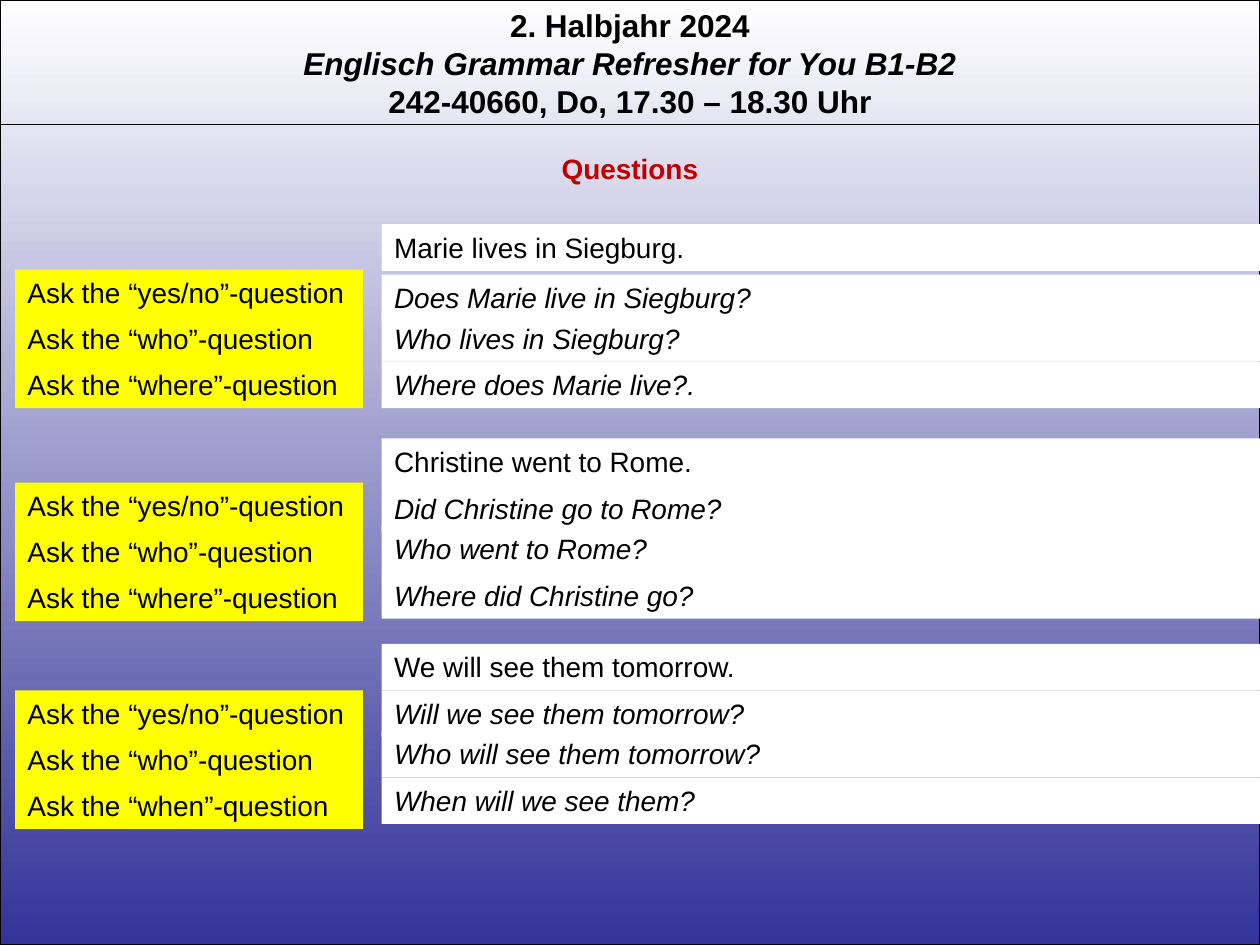
from lxml.etree import SubElement
from pptx import Presentation
from pptx.dml.color import RGBColor
from pptx.enum.shapes import MSO_CONNECTOR as Link, MSO_SHAPE as Kind
from pptx.enum.text import MSO_ANCHOR as Anchor, MSO_AUTO_SIZE as Auto, PP_ALIGN as Align
from pptx.oxml.ns import qn
from pptx.util import Inches, Pt

# The grid has 100 columns and 75 rows of a tenth of an inch each.
COLS, ROWS = 100, 75
BAR = 3.7
ASK = (1.2, 27.6)
REPLY = (30.3, 69.7)
ASK_STEP = 3.65
REPLY_STEPS = (0, 3.2, 6.9)

# Top of the statement, of the first prompt and of the first reply, then the texts.
DRILLS = [
    (17.8, 21.4, 21.8, "Marie lives in Siegburg.",
     [("yes/no", "Does Marie live in Siegburg?"),
      ("who", "Who lives in Siegburg?"),
      ("where", "Where does Marie live?.")]),
    (34.8, 38.3, 38.5, "Christine went to Rome.",
     [("yes/no", "Did Christine go to Rome?"),
      ("who", "Who went to Rome?"),
      ("where", "Where did Christine go?")]),
    (51.1, 54.8, 54.8, "We will see them tomorrow.",
     [("yes/no", "Will we see them tomorrow?"),
      ("who", "Who will see them tomorrow?"),
      ("when", "When will we see them?")]),
]


def cells(*nums):
    return [Inches(num / 10) for num in nums]


def color(code):
    return RGBColor.from_string(code)


def write(shape, lines, size=16, bold=False, slant=(), ink="000000", align=Align.LEFT):
    """Fill the shape with lines; slant holds the numbers of the italic ones."""
    frame = shape.text_frame
    frame.word_wrap = True
    frame.auto_size = Auto.SHAPE_TO_FIT_TEXT
    frame.vertical_anchor = Anchor.TOP
    for num, line in enumerate(lines):
        para = frame.paragraphs[0] if num == 0 else frame.add_paragraph()
        para.alignment = align
        run = para.add_run()
        run.text = line
        font = run.font
        font.name, font.size, font.bold = "Arial", Pt(size), bold
        font.italic = num in slant
        font.color.rgb = color(ink)


def add_bar(slide, box, line, fill, **form):
    bar = slide.shapes.add_shape(Kind.RECTANGLE, *cells(*box))
    bar.shadow.inherit = False
    bar.fill.solid()
    bar.fill.fore_color.rgb = color(fill)
    bar.line.fill.background()
    write(bar, [line], **form)


def add_ground(slide, box):
    ground = slide.shapes.add_shape(Kind.RECTANGLE, *cells(*box))
    ground.shadow.inherit = False
    ground.fill.gradient()
    ground.fill.gradient_angle = 270
    for stop, code in zip(ground.fill.gradient_stops, ("FFFFFF", "333399")):
        stop.color.rgb = color(code)
    ground.line.color.rgb = color("000000")
    ground.line.width = Pt(0.75)
    # Behind the title placeholder
    slide.shapes.element.insert(2, ground.element)


def add_head(slide, box):
    left, top, width, height = box
    head = slide.shapes.add_textbox(*cells(*box))
    write(head, ["2. Halbjahr 2024",
                 "Englisch Grammar Refresher for You B1-B2",
                 "242-40660, Do, 17.30 – 18.30 Uhr"],
          size=18, bold=True, slant=(1,), align=Align.CENTER)
    low = top + height - 0.2
    rule = slide.shapes.add_connector(Link.STRAIGHT, *cells(left, low, left + width, low))
    rule.line.color.rgb = color("000000")
    rule.line.width = Pt(0.75)
    SubElement(rule.element.spPr, qn("a:effectLst"))


def set_title(slide, box):
    title = slide.shapes.title
    title.left, title.top, title.width, title.height = cells(*box)
    write(title, ["Questions"], bold=True, ink="C00000", align=Align.CENTER)


def add_drill(slide, top, ask_top, reply_top, fact, pairs):
    """Place a statement with its prompts at the left and replies at the right."""
    (ask_left, ask_width), (left, width) = ASK, REPLY
    add_bar(slide, (left, top, width, BAR), fact, "FFFFFF")
    for num, (word, reply) in enumerate(pairs):
        add_bar(slide, (ask_left, ask_top + num * ASK_STEP, ask_width, BAR),
                f"Ask the “{word}”-question", "FFFF00")
        add_bar(slide, (left, reply_top + REPLY_STEPS[num], width, BAR),
                reply, "FFFFFF", slant=(0,))


def main():
    deck = Presentation()
    deck.slide_width, deck.slide_height = cells(COLS, ROWS)
    slide = deck.slides.add_slide(deck.slide_layouts[5])
    add_ground(slide, (0, 0, COLS, ROWS))
    add_head(slide, (0, 0, COLS, 10.1))
    set_title(slide, (0, 11.5, COLS, BAR))
    for drill in DRILLS:
        add_drill(slide, *drill)
    deck.save("out.pptx")


if __name__ == "__main__":
    main()
